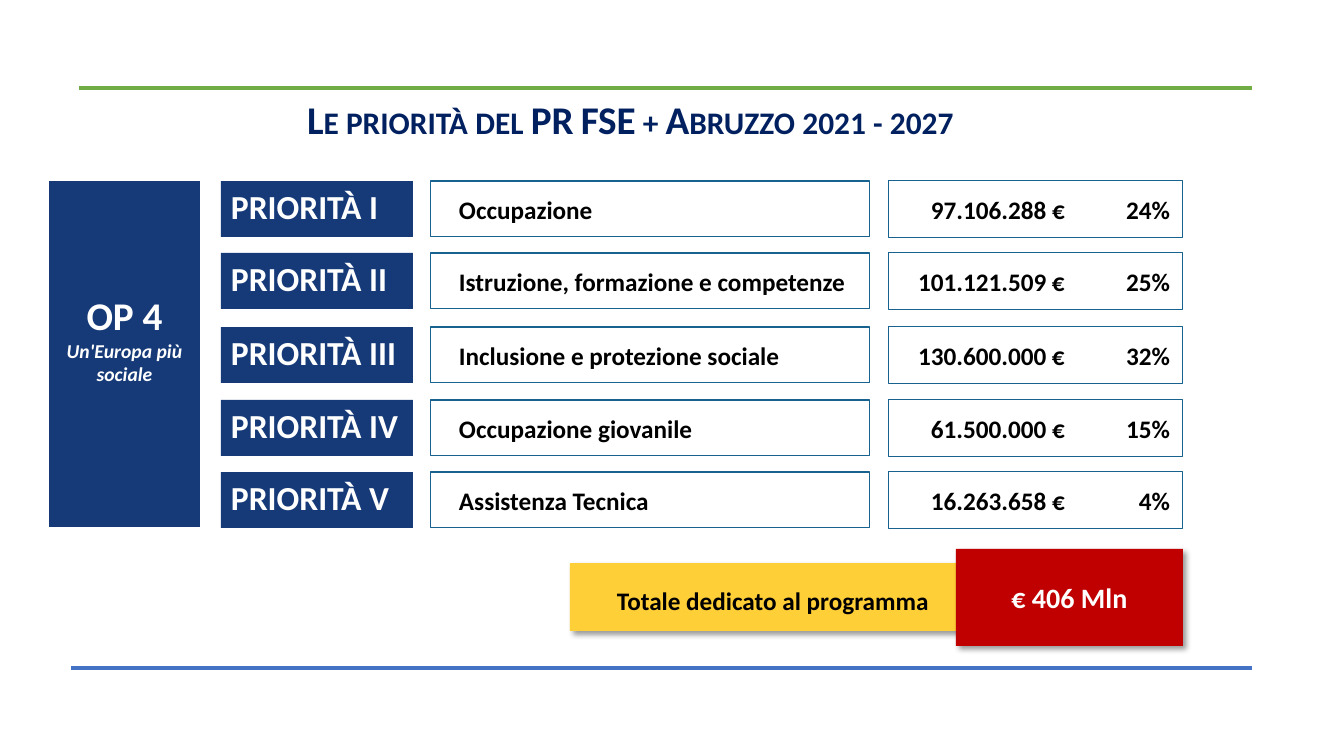
"""Build the slide on the priorities of the PR FSE + Abruzzo 2021 - 2027."""
from dataclasses import dataclass

from lxml import etree
from pptx import Presentation
from pptx.dml.color import RGBColor
from pptx.enum.shapes import MSO_CONNECTOR, MSO_SHAPE
from pptx.enum.text import MSO_ANCHOR, MSO_AUTO_SIZE, PP_ALIGN
from pptx.oxml import parse_xml
from pptx.oxml.ns import nsdecls, qn
from pptx.util import Pt


@dataclass(frozen=True)
class Theme:
    """Colours, font and type sizes."""
    font: str = "Calibri"
    navy: str = "163A78"
    ink: str = "002060"
    edge: str = "18628F"
    green: str = "70AD47"
    blue: str = "4472C4"
    gold: str = "FFCF37"
    red: str = "C00000"
    white: str = "FFFFFF"
    black: str = "000000"
    head: int = 28
    label: int = 24
    total: int = 20
    body: int = 18
    small: int = 14


T = Theme()
PX = 12192000 / 1344


def style(par, size, color, align=PP_ALIGN.LEFT, italic=False):
    """Set the alignment and font of a paragraph."""
    par.alignment = align
    font = par.font
    font.name, font.size, font.bold, font.italic = T.font, Pt(size), True, italic
    font.color.rgb = RGBColor.from_string(color)


def panel(at, fill=None, pad=(10, 5, 10, 5), anchor=MSO_ANCHOR.MIDDLE):
    """Add a filled or outlined rectangle and return it."""
    box = slide.shapes.add_shape(MSO_SHAPE.RECTANGLE, *[round(v * PX) for v in at])
    box.shadow.inherit = False
    if fill:
        box.fill.solid()
        box.fill.fore_color.rgb = RGBColor.from_string(fill)
        box.line.fill.background()
    else:
        box.fill.background()
        box.line.color.rgb = RGBColor.from_string(T.edge)
        box.line.width = Pt(0.75)
    frame = box.text_frame
    frame.word_wrap, frame.vertical_anchor = True, anchor
    (frame.margin_left, frame.margin_top,
     frame.margin_right, frame.margin_bottom) = [round(v * PX) for v in pad]
    return box


deck = Presentation()
deck.slide_width, deck.slide_height = round(1344 * PX), round(756 * PX)
slide = deck.slides.add_slide(deck.slide_layouts[5])

for left, top, color in ((79, 88, T.green), (71, 668, T.blue)):
    ends = [round(v * PX) for v in (left, top, 1252, top)]
    rule = slide.shapes.add_connector(MSO_CONNECTOR.STRAIGHT, *ends)
    rule.line.color.rgb = RGBColor.from_string(color)
    rule.line.width = Pt(3.25)
    etree.SubElement(rule._element.spPr, qn("a:effectLst"))

title = slide.shapes.title
title.left, title.top, title.width, title.height = [
    round(v * PX) for v in (297, 90, 750, 57)]
frame = title.text_frame
frame.text = "Le priorità del PR FSE + Abruzzo 2021 - 2027"
frame.word_wrap, frame.auto_size = True, MSO_AUTO_SIZE.NONE
frame.vertical_anchor = MSO_ANCHOR.TOP
style(frame.paragraphs[0], T.head, T.ink)
frame.paragraphs[0].runs[0]._r.get_or_add_rPr().set("cap", "small")

frame = panel((49, 181, 151, 346), T.navy, (10, 5, 10, 36)).text_frame
frame.text = "OP 4\nUn'Europa più sociale"
style(frame.paragraphs[0], T.head, T.white, PP_ALIGN.CENTER)
style(frame.paragraphs[1], T.small, T.white, PP_ALIGN.CENTER, True)

rows = (
    (181, "I", "Occupazione", "97.106.288", 24),
    (253, "II", "Istruzione, formazione e competenze", "101.121.509", 25),
    (327, "III", "Inclusione e protezione sociale", "130.600.000", 32),
    (400, "IV", "Occupazione giovanile", "61.500.000", 15),
    (472, "V", "Assistenza Tecnica", "16.263.658", 4),
)
for top, rank, goal, sum_, share in rows:
    label = panel((221, top, 192, 56), T.navy, anchor=MSO_ANCHOR.TOP).text_frame
    label.text = f"PRIORITÀ {rank}"
    style(label.paragraphs[0], T.label, T.white)

    aim = panel((431, top, 439, 56), pad=(28, 5, 10, 5)).text_frame
    aim.text = goal
    style(aim.paragraphs[0], T.body, T.black)

    funds = panel((889, top, 294, 57)).text_frame
    funds.text = f"\t{sum_} €\t{share}%"
    par = funds.paragraphs[0]
    tabs = etree.SubElement(par._p.get_or_add_pPr(), qn("a:tabLst"))
    for stop in (166, 271):
        etree.SubElement(tabs, qn("a:tab"), pos=str(round(stop * PX)), algn="r")
    style(par, T.body, T.black)

totals = (
    ((570, 563, 443, 68), T.gold, (47, 11, 10, 5), "Totale dedicato al programma",
     T.body, T.black, PP_ALIGN.LEFT),
    ((956, 549, 227, 97), T.red, (10, 5, 10, 5), "€ 406 Mln",
     T.total, T.white, PP_ALIGN.CENTER),
)
for at, fill, pad, text, size, color, align in totals:
    box = panel(at, fill, pad)
    box.text_frame.text = text
    style(box.text_frame.paragraphs[0], size, color, align)
    box._element.spPr.find(qn("a:effectLst")).append(parse_xml(
        f'<a:outerShdw {nsdecls("a")} blurRad="{Pt(4)}" dist="{Pt(3)}" dir="2700000" '
        f'algn="tl" rotWithShape="0"><a:srgbClr val="{T.black}">'
        '<a:alpha val="40000"/></a:srgbClr></a:outerShdw>'))

deck.save("out.pptx")
